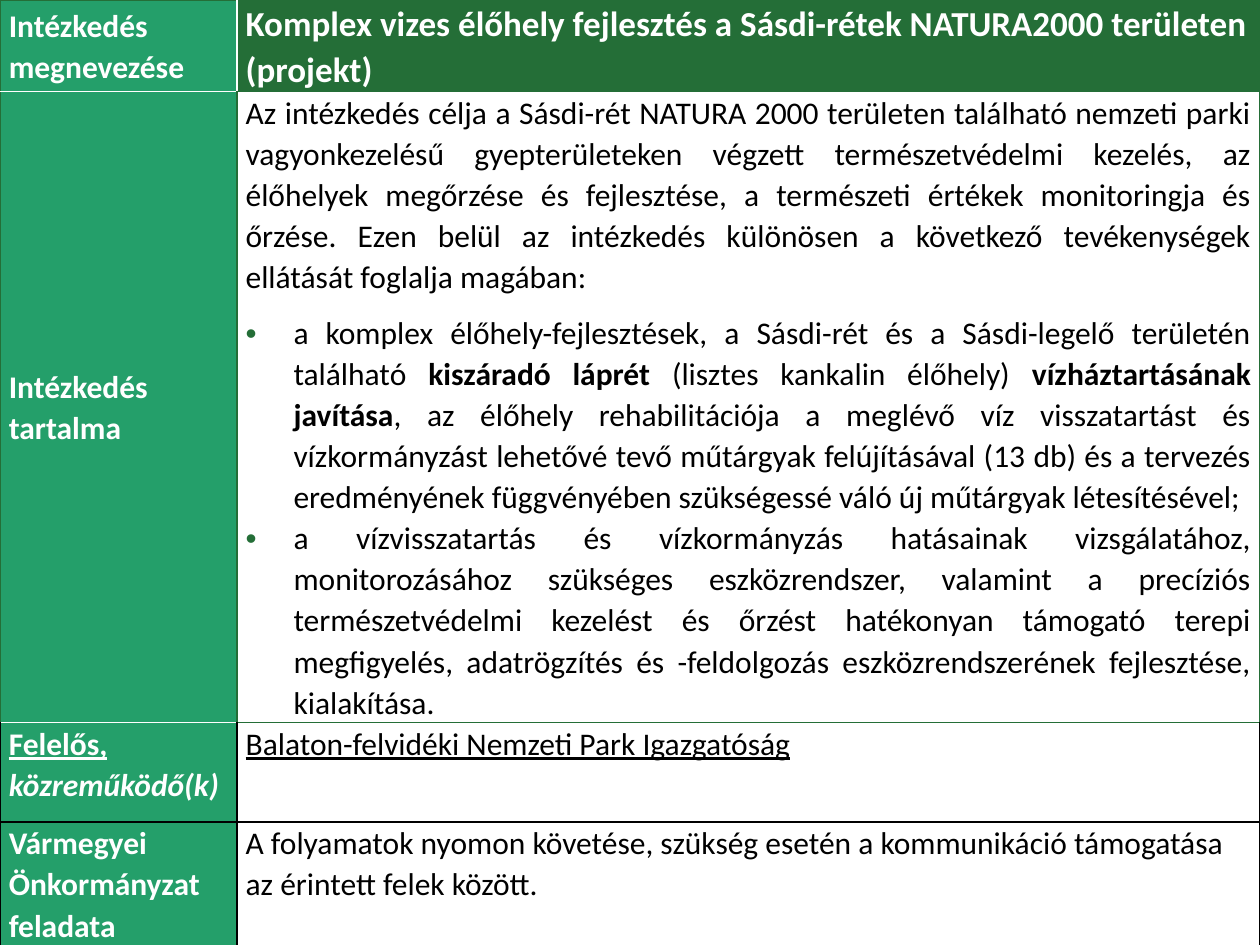
from dataclasses import dataclass

from lxml.etree import SubElement
from pptx import Presentation
from pptx.dml.color import RGBColor
from pptx.enum.text import MSO_ANCHOR, PP_ALIGN
from pptx.oxml.ns import qn
from pptx.util import Inches, Pt


@dataclass(frozen=True)
class Theme:
    font: str = "Calibri"
    body_size: int = 18
    title_size: int = 20
    white: str = "FFFFFF"
    black: str = "000000"
    label_green: str = "249F6A"
    title_green: str = "246E37"
    line_spacing: float = 1.07
    space_after: int = 8
    border_width: int = 1
    side_margin: float = 0.07
    bullet_indent: float = 0.38


THEME = Theme()


@dataclass
class Paragraph:
    """Runs are (text, font attributes) pairs."""
    runs: list
    justified: bool = False
    bullet: bool = False
    space_after: int = THEME.space_after


@dataclass
class CellContent:
    """Borders are colours in the order left, right, top, bottom."""
    paragraphs: list
    borders: tuple
    fill: str = None
    color: str = THEME.black
    size: int = THEME.body_size
    bold: bool = False
    anchor: MSO_ANCHOR = MSO_ANCHOR.TOP


def add_solid_color(parent, color):
    SubElement(SubElement(parent, qn("a:solidFill")), qn("a:srgbClr"), val=color)


class SlideBuilder:
    def __init__(self, presentation, theme):
        self.theme = theme
        self.slide = presentation.slides.add_slide(presentation.slide_layouts[6])

    def table(self, column_widths, row_heights, rows):
        frame = self.slide.shapes.add_table(
            len(row_heights), len(column_widths), 0, 0,
            Inches(sum(column_widths)), Inches(sum(row_heights)))
        table = frame.table
        table.first_row = table.horz_banding = False
        for column, width in zip(table.columns, column_widths):
            column.width = Inches(width)
        for row, height, contents in zip(table.rows, row_heights, rows):
            row.height = Inches(height)
            for cell, content in zip(row.cells, contents):
                self.cell(cell, content)

    def cell(self, cell, content):
        margin = Inches(self.theme.side_margin)
        layout = {"margin_left": margin, "margin_right": margin, "margin_top": 0,
                  "margin_bottom": 0, "vertical_anchor": content.anchor}
        for name, value in layout.items():
            setattr(cell, name, value)
        self.borders(cell, content.borders)
        if content.fill:
            cell.fill.solid()
            cell.fill.fore_color.rgb = RGBColor.from_string(content.fill)
        else:
            cell.fill.background()
        frame = cell.text_frame
        for index, paragraph in enumerate(content.paragraphs):
            target = frame.add_paragraph() if index else frame.paragraphs[0]
            self.paragraph(target, paragraph, content)

    def borders(self, cell, colors):
        properties = cell._tc.get_or_add_tcPr()
        width = str(Pt(self.theme.border_width))
        for side, color in zip("LRTB", colors):
            add_solid_color(SubElement(properties, qn(f"a:ln{side}"), w=width), color)

    def paragraph(self, target, paragraph, content):
        if paragraph.bullet:
            self.bullet(target)
        formats = {"line_spacing": self.theme.line_spacing,
                   "space_before": Pt(0),
                   "space_after": Pt(paragraph.space_after),
                   "alignment": PP_ALIGN.JUSTIFY if paragraph.justified else PP_ALIGN.LEFT}
        for name, value in formats.items():
            setattr(target, name, value)
        for text, extra in paragraph.runs:
            run = target.add_run()
            run.text = text
            font_format = {"name": self.theme.font, "size": Pt(content.size),
                           "bold": content.bold, **extra}
            for name, value in font_format.items():
                setattr(run.font, name, value)
            run.font.color.rgb = RGBColor.from_string(content.color)

    def bullet(self, target):
        properties = target._p.get_or_add_pPr()
        indent = Inches(self.theme.bullet_indent)
        properties.set("marL", str(indent))
        properties.set("indent", str(-indent))
        bullet_color = SubElement(properties, qn("a:buClr"))
        SubElement(bullet_color, qn("a:srgbClr"), val=self.theme.title_green)
        SubElement(properties, qn("a:buFont"), typeface="Arial")
        SubElement(properties, qn("a:buChar"), char="•")


def label(runs, borders, anchor=MSO_ANCHOR.TOP):
    return CellContent([Paragraph(runs)], borders, THEME.label_green, THEME.white,
                       bold=True, anchor=anchor)


def measure_rows():
    white, black, green = THEME.white, THEME.black, THEME.title_green
    middle = MSO_ANCHOR.MIDDLE
    bold, underlined = {"bold": True}, {"underline": True}

    title = CellContent(
        [Paragraph([("Komplex vizes élőhely fejlesztés a Sásdi-rétek NATURA2000 "
                     "területen (projekt)", {})])],
        (white, green, green, green), green, white, THEME.title_size, True, middle)
    purpose = Paragraph([(
        "Az intézkedés célja a Sásdi-rét NATURA 2000 területen található nemzeti parki "
        "vagyonkezelésű gyepterületeken végzett természetvédelmi kezelés, az élőhelyek "
        "megőrzése és fejlesztése, a természeti értékek monitoringja és őrzése. Ezen belül "
        "az intézkedés különösen a következő tevékenységek ellátását foglalja magában:", {})],
        justified=True)
    habitat = Paragraph([
        ("a komplex élőhely-fejlesztések, a Sásdi-rét és a Sásdi-legelő területén "
         "található ", {}),
        ("kiszáradó láprét ", bold),
        ("(lisztes kankalin élőhely) ", {}),
        ("vízháztartásának javítása", bold),
        (", az élőhely rehabilitációja a meglévő víz visszatartást és vízkormányzást "
         "lehetővé tevő műtárgyak felújításával (13 db) és a tervezés eredményének "
         "függvényében szükségessé váló új műtárgyak létesítésével;", {})],
        justified=True, bullet=True, space_after=0)
    monitoring = Paragraph([(
        "a vízvisszatartás és vízkormányzás hatásainak vizsgálatához, monitorozásához "
        "szükséges eszközrendszer, valamint a precíziós természetvédelmi kezelést és "
        "őrzést hatékonyan támogató terepi megfigyelés, adatrögzítés és -feldolgozás "
        "eszközrendszerének fejlesztése, kialakítása.", {})],
        justified=True, bullet=True)
    responsible = Paragraph([("Balaton-felvidéki Nemzeti Park Igazgatóság", underlined)])
    county_task = Paragraph([(
        "A folyamatok nyomon követése, szükség esetén a kommunikáció támogatása "
        "az érintett felek között.", {})])

    return [
        [label([("Intézkedés megnevezése", {})], (green, white, green, white), middle), title],
        [label([("Intézkedés tartalma", {})], (green, green, white, white), middle),
         CellContent([purpose, habitat, monitoring], (green,) * 4, anchor=middle)],
        [label([("Felelős, ", underlined), ("közreműködő(k)", {"italic": True})],
               (black, black, white, black)),
         CellContent([responsible], (black, black, green, black))],
        [label([("Vármegyei Önkormányzat feladata", {})], (black,) * 4),
         CellContent([county_task], (black,) * 4)],
    ]


def main():
    presentation = Presentation()
    presentation.slide_width = Inches(10)
    presentation.slide_height = Inches(7.5)
    builder = SlideBuilder(presentation, THEME)
    builder.table([1.88, 8.12], [0.71, 4.93, 0.79, 1.07], measure_rows())
    presentation.save("out.pptx")


if __name__ == "__main__":
    main()
